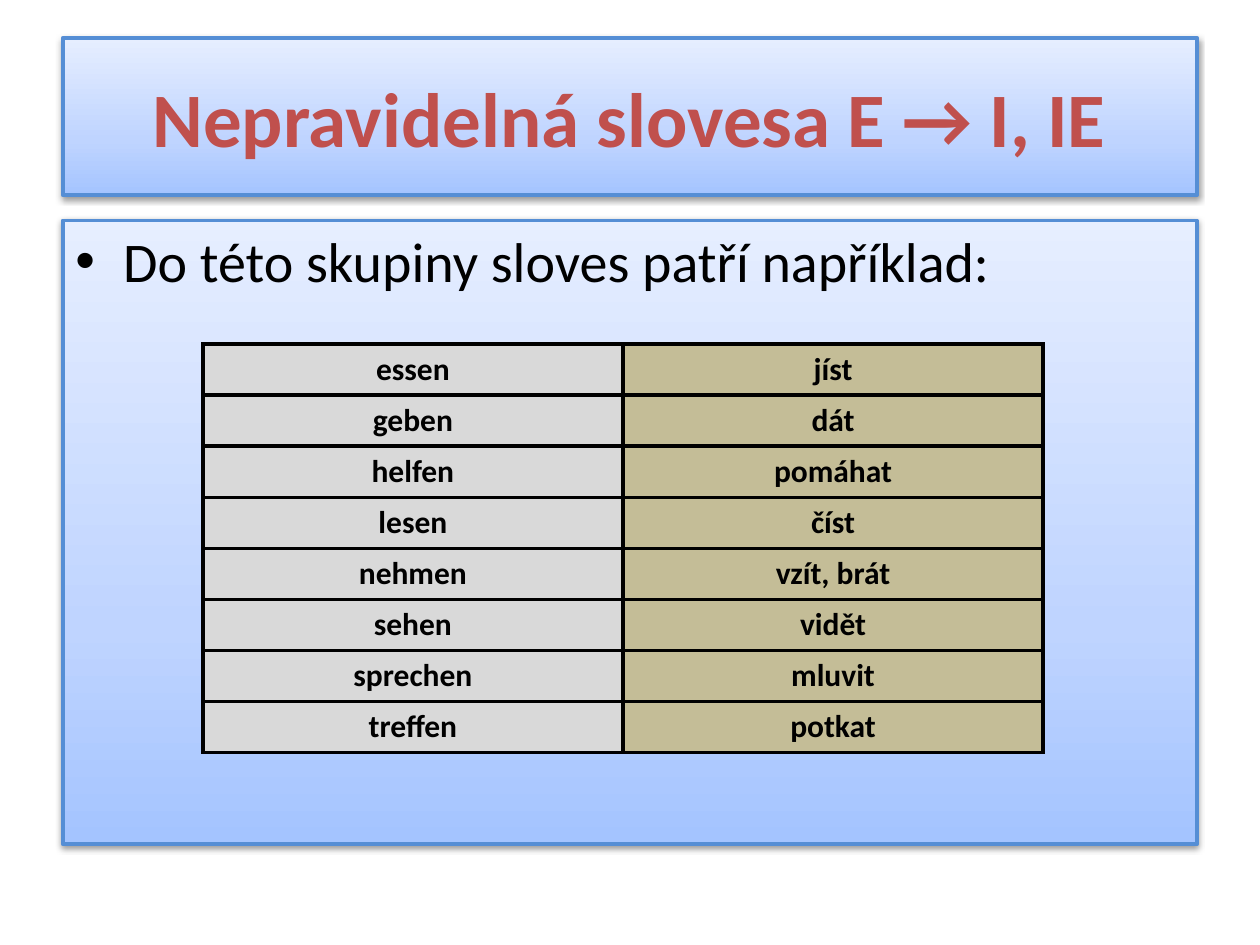
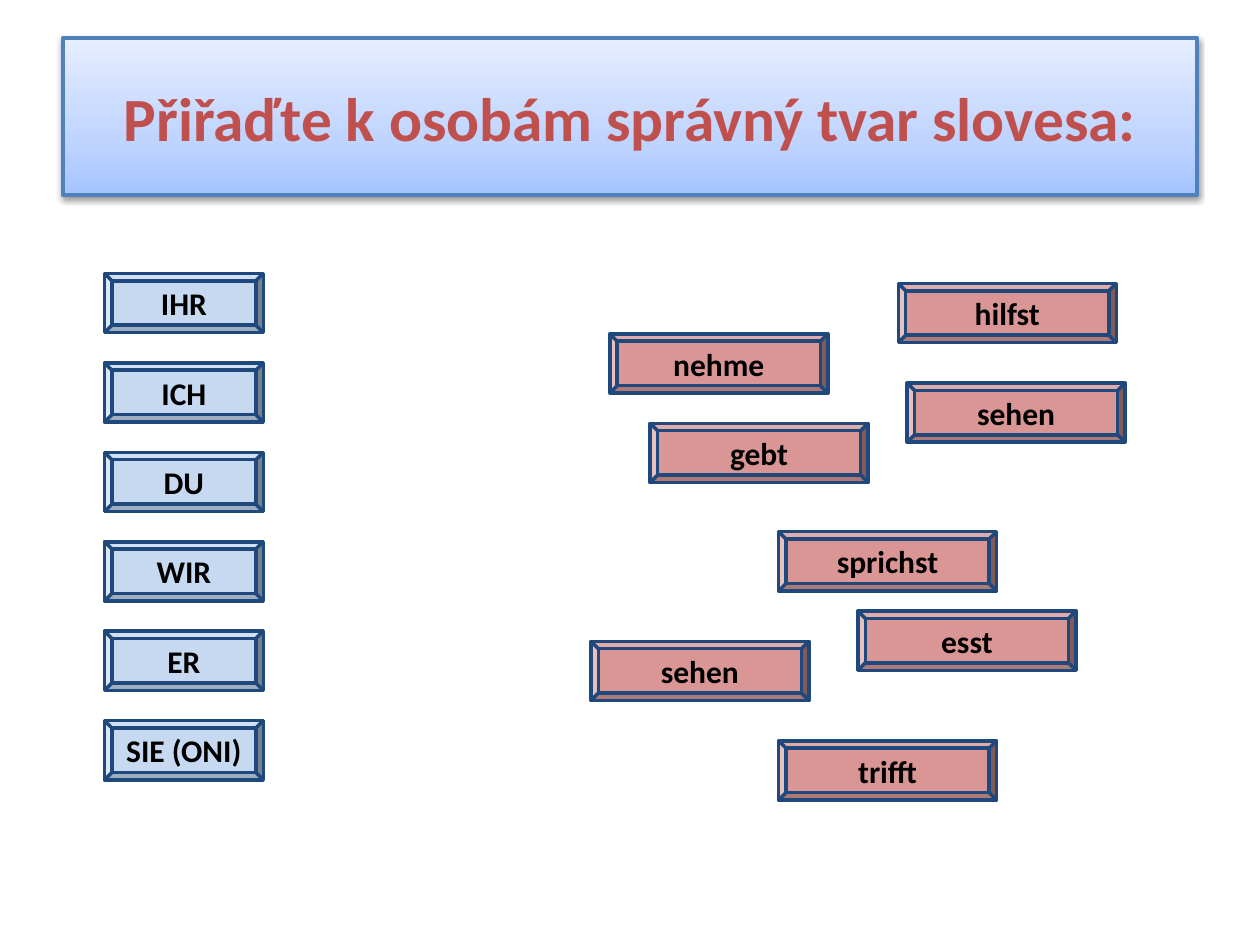
from lxml.etree import SubElement
from copy import deepcopy
from pptx import Presentation
from pptx.dml.color import RGBColor
from pptx.enum.shapes import MSO_SHAPE as Shape
from pptx.enum.text import MSO_ANCHOR as Anchor, PP_ALIGN as Align
from pptx.oxml.ns import qn
from pptx.util import Inches, Pt

BLACK = RGBColor(0x00, 0x00, 0x00)
TITLE_RED = RGBColor(0xC0, 0x50, 0x4D)
PANEL_LINE = RGBColor(0x55, 0x8E, 0xD5)
TITLE_LINE = RGBColor(0x4F, 0x81, 0xBD)
TILE_LINE = RGBColor(0x1F, 0x49, 0x7D)
PERSON_BLUE = RGBColor(0xC6, 0xD9, 0xF1)
VERB_PINK = RGBColor(0xD9, 0x96, 0x94)
GERMAN_GREY = RGBColor(0xD9, 0xD9, 0xD9)
CZECH_TAN = RGBColor(0xC4, 0xBD, 0x97)
PANEL_GRADIENT = [
    (0, RGBColor(0xA4, 0xC4, 0xFF)),
    (0.35, RGBColor(0xBF, 0xD4, 0xFF)),
    (1, RGBColor(0xE6, 0xEE, 0xFF)),
]
FONT = "Calibri"

VERBS = [
    ("essen", "jíst"),
    ("geben", "dát"),
    ("helfen", "pomáhat"),
    ("lesen", "číst"),
    ("nehmen", "vzít, brát"),
    ("sehen", "vidět"),
    ("sprechen", "mluvit"),
    ("treffen", "potkat"),
]
PERSONS = ["IHR", "ICH", "DU", "WIR", "ER", "SIE (ONI)"]
VERB_TILES = [
    ("nehme", 4.84, 2.65),
    ("gebt", 5.16, 3.36),
    ("trifft", 6.18, 5.88),
    ("sehen", 7.2, 3.04),
    ("esst", 6.81, 4.85),
    ("hilfst", 7.13, 2.25),
    ("sehen", 4.69, 5.09),
    ("sprichst", 6.18, 4.22),
]


class LessonDeck:
    """Holds the shared style and the slide being built."""

    def __init__(self):
        self.deck = Presentation()
        self.deck.slide_width = Inches(10)
        self.deck.slide_height = Inches(7.5)
        self.slide = None

    def new_slide(self):
        self.slide = self.deck.slides.add_slide(self.deck.slide_layouts[6])

    def set_text(self, frame, text, size, color=BLACK, bold=True, align=Align.CENTER):
        frame.text = text
        para = frame.paragraphs[0]
        para.alignment = align
        font = para.runs[0].font
        font.name, font.size, font.bold = FONT, Pt(size), bold
        font.color.rgb = color
        return para

    def shape(self, kind, left, top, width, height, line, weight):
        box = self.slide.shapes.add_shape(
            kind, Inches(left), Inches(top), Inches(width), Inches(height))
        box.shadow.inherit = False
        box.line.color.rgb = line
        box.line.width = Pt(weight)
        box.text_frame.word_wrap = True
        return box

    def panel(self, top, height, line):
        """Full-width box with a blue gradient and a soft shadow."""
        box = self.shape(Shape.RECTANGLE, 0.5, top, 9, height, line, 2.25)
        box.fill.gradient()
        box.fill.gradient_angle = 90
        properties = box._element.spPr
        stop_list = properties.find(".//" + qn("a:gsLst"))
        stop_list.insert(1, deepcopy(stop_list[0]))
        for stop, (position, color) in zip(box.fill.gradient_stops, PANEL_GRADIENT):
            stop.position = position
            stop.color.rgb = color
        shadow = SubElement(properties.find(qn("a:effectLst")), qn("a:outerShdw"),
                            blurRad="40000", dist="20000", dir="5400000", rotWithShape="0")
        shadow_color = SubElement(shadow, qn("a:srgbClr"), val=str(BLACK))
        SubElement(shadow_color, qn("a:alpha"), val="38000")
        return box

    def title(self, text, size, line):
        box = self.panel(0.3, 1.25, line)
        box.text_frame.vertical_anchor = Anchor.MIDDLE
        self.set_text(box.text_frame, text, size, TITLE_RED)

    def bullet_panel(self, text):
        box = self.panel(1.75, 4.95, PANEL_LINE)
        box.text_frame.vertical_anchor = Anchor.TOP
        para = self.set_text(box.text_frame, text, 32, bold=False, align=Align.LEFT)
        para.space_before = Pt(6.4)
        settings = para._p.get_or_add_pPr()
        settings.set("marL", str(Inches(0.38)))
        settings.set("indent", str(Inches(-0.38)))
        SubElement(settings, qn("a:buFont"), typeface="Arial")
        SubElement(settings, qn("a:buChar"), char="•")

    def border(self, cell):
        settings = cell._tc.get_or_add_tcPr()
        for index, side in enumerate(("a:lnL", "a:lnR", "a:lnT", "a:lnB")):
            edge = SubElement(settings, qn(side), w=str(Pt(2.25)))
            fill = SubElement(edge, qn("a:solidFill"))
            SubElement(fill, qn("a:srgbClr"), val=str(BLACK))
            settings.insert(index, edge)

    def verb_table(self, rows, left, top, width, height):
        # Rows and columns share the size equally
        table = self.slide.shapes.add_table(
            len(rows), 2, Inches(left), Inches(top),
            Inches(width), Inches(height)).table
        table.first_row = table.horz_banding = False
        for row, words in zip(table.rows, rows):
            for cell, word, color in zip(row.cells, words, (GERMAN_GREY, CZECH_TAN)):
                self.set_text(cell.text_frame, word, 18)
                cell.fill.solid()
                cell.fill.fore_color.rgb = color
                self.border(cell)

    def tile(self, text, left, top, width, color):
        box = self.shape(Shape.BEVEL, left, top, width, 0.47, TILE_LINE, 2)
        box.fill.solid()
        box.fill.fore_color.rgb = color
        box.text_frame.vertical_anchor = Anchor.MIDDLE
        self.set_text(box.text_frame, text, 18)


def main():
    lesson = LessonDeck()

    # Verb list
    lesson.new_slide()
    lesson.title("Nepravidelná slovesa E → I, IE", 44, PANEL_LINE)
    lesson.bullet_panel("Do této skupiny sloves patří například:")
    lesson.verb_table(VERBS, 1.61, 2.73, 6.67, 3.24)

    # Matching exercise
    lesson.new_slide()
    lesson.title("Přiřaďte k osobám správný tvar slovesa:", 35.1, TITLE_LINE)
    for index, person in enumerate(PERSONS):
        lesson.tile(person, 0.83, 2.17 + 0.71 * index, 1.26, PERSON_BLUE)
    for verb, left, top in VERB_TILES:
        lesson.tile(verb, left, top, 1.73, VERB_PINK)

    lesson.deck.save("out.pptx")


if __name__ == "__main__":
    main()
